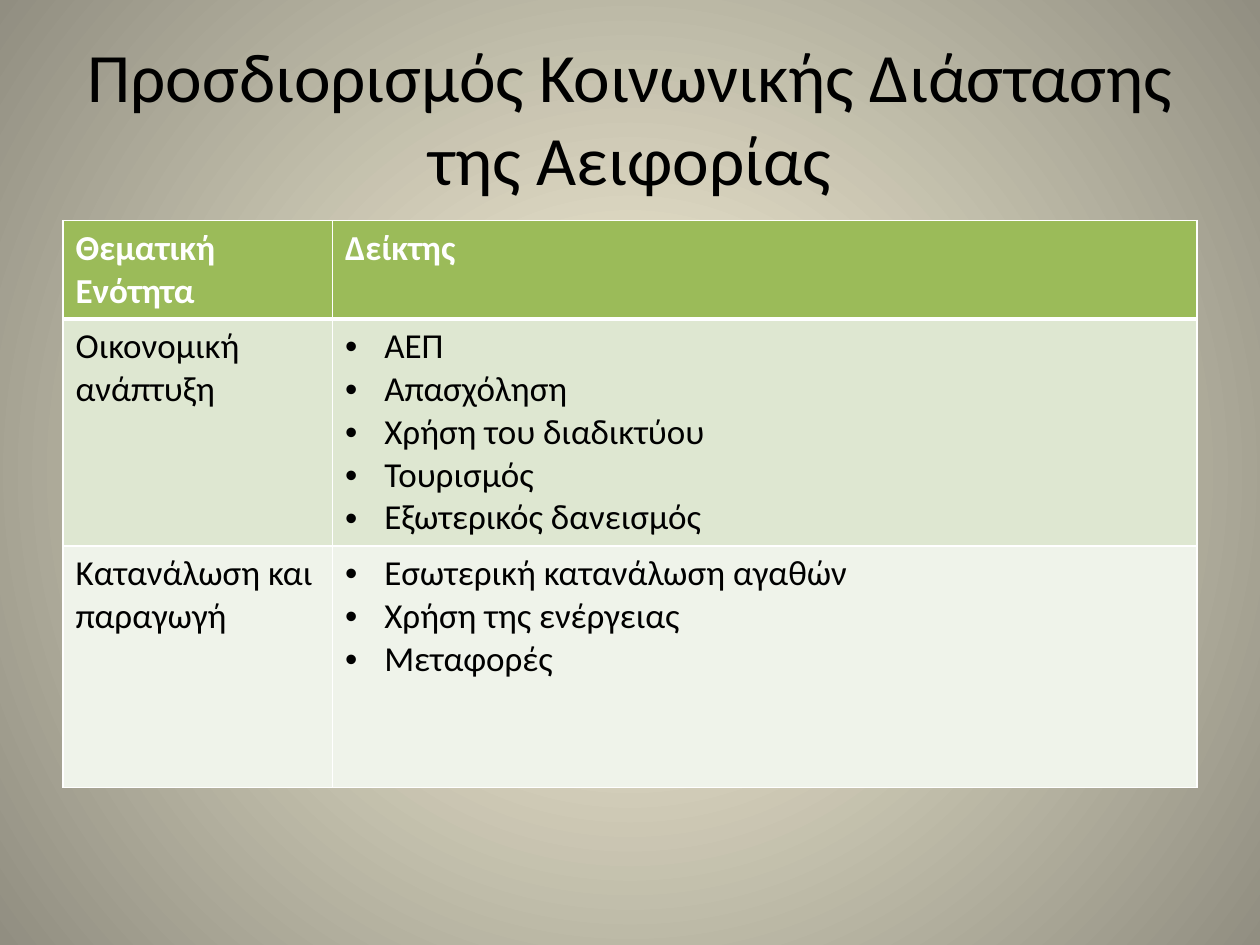
from dataclasses import dataclass

from lxml.etree import SubElement
from pptx import Presentation
from pptx.dml.color import RGBColor
from pptx.enum.text import MSO_ANCHOR, MSO_AUTO_SIZE, PP_ALIGN
from pptx.oxml.ns import qn
from pptx.slide import Slide
from pptx.table import _Cell
from pptx.util import Inches, Pt


@dataclass(frozen=True)
class Theme:
    font: str = "Calibri"
    title_size: float = 39.6
    body_size: float = 20
    text: str = "000000"
    white: str = "FFFFFF"
    header: str = "9BBB59"
    bands: tuple[str, ...] = ("DEE7D1", "EFF3EA")
    glow: tuple[str, ...] = ("FCF7DD", "918E81")
    border: float = 1
    header_rule: float = 3


@dataclass(frozen=True)
class Topic:
    name: str
    indicators: tuple[str, ...]
    height: float


THEME = Theme()
TITLE = "Προσδιορισμός Κοινωνικής Διάστασης της Αειφορίας"
HEADINGS = ("Θεματική Ενότητα", "Δείκτης")
HEADER_HEIGHT = 0.78
COLUMN_WIDTHS = (2.14, 6.86)
TOPICS = (
    Topic("Οικονομική ανάπτυξη",
          ("ΑΕΠ", "Απασχόληση", "Χρήση του διαδικτύου", "Τουρισμός",
           "Εξωτερικός δανεισμός"), 1.8),
    Topic("Κατανάλωση και παραγωγή",
          ("Εσωτερική κατανάλωση αγαθών", "Χρήση της ενέργειας", "Μεταφορές"), 1.92),
)


def add_run(p, text: str, size: float, color: str, bold: bool = False) -> None:
    r = p.add_run()
    r.text = text
    r.font.name = THEME.font
    r.font.size = Pt(size)
    r.font.bold = bold
    r.font.color.rgb = RGBColor.from_string(color)


def set_background(s: Slide) -> None:
    """Fill the background with a gradient that spreads from the centre."""
    fill = s.background.fill
    fill.gradient()
    for stop, color, position in zip(fill.gradient_stops, THEME.glow, (0, 1)):
        stop.color.rgb = RGBColor.from_string(color)
        stop.position = position
    grad = s._element.find(".//" + qn("a:gradFill"))
    grad.remove(grad.find(qn("a:lin")))
    circle = SubElement(grad, qn("a:path"), path="circle")
    SubElement(circle, qn("a:fillToRect"), dict.fromkeys("ltrb", "50000"))


def add_title(s: Slide) -> None:
    sp = s.shapes.title
    sp.left, sp.top, sp.width, sp.height = map(Inches, (0.5, 0.3, 9, 1.25))
    tf = sp.text_frame
    tf.word_wrap = True
    tf.auto_size = MSO_AUTO_SIZE.NONE
    tf.vertical_anchor = MSO_ANCHOR.MIDDLE
    p = tf.paragraphs[0]
    p.alignment = PP_ALIGN.CENTER
    add_run(p, TITLE, THEME.title_size, THEME.text)


def set_borders(cell: _Cell, top: float, bottom: float) -> None:
    tc_pr = cell._tc.get_or_add_tcPr()
    widths = {"L": THEME.border, "R": THEME.border, "T": top, "B": bottom}
    for side, width in widths.items():
        ln = SubElement(tc_pr, qn(f"a:ln{side}"), w=str(Pt(width)))
        SubElement(SubElement(ln, qn("a:solidFill")), qn("a:srgbClr"), val=THEME.white)


def add_bullet(p) -> None:
    indent = Inches(0.31)
    p_pr = p._p.get_or_add_pPr()
    p_pr.set("marL", str(indent))
    p_pr.set("indent", str(-indent))
    SubElement(p_pr, qn("a:buFont"), typeface="Arial")
    SubElement(p_pr, qn("a:buChar"), char="•")


def fill_cell(cell: _Cell, lines: tuple[str, ...], fill: str, *,
              header: bool = False, bullets: bool = False,
              top: float = THEME.border) -> None:
    set_borders(cell, top, THEME.header_rule if header else THEME.border)
    cell.fill.solid()
    cell.fill.fore_color.rgb = RGBColor.from_string(fill)
    tf = cell.text_frame
    for i, line in enumerate(lines):
        p = tf.add_paragraph() if i else tf.paragraphs[0]
        if bullets:
            add_bullet(p)
        add_run(p, line, THEME.body_size, THEME.white if header else THEME.text, header)


def add_indicator_table(s: Slide) -> None:
    heights = (HEADER_HEIGHT, *(topic.height for topic in TOPICS))
    table = s.shapes.add_table(
        len(heights), len(COLUMN_WIDTHS), Inches(0.5), Inches(1.75),
        Inches(sum(COLUMN_WIDTHS)), Inches(sum(heights))).table
    for column, width in zip(table.columns, COLUMN_WIDTHS):
        column.width = Inches(width)
    for row, height in zip(table.rows, heights):
        row.height = Inches(height)
    for col, heading in enumerate(HEADINGS):
        fill_cell(table.cell(0, col), (heading,), THEME.header, header=True)
    for row, (topic, band) in enumerate(zip(TOPICS, THEME.bands), start=1):
        top = THEME.header_rule if row == 1 else THEME.border
        fill_cell(table.cell(row, 0), (topic.name,), band, top=top)
        fill_cell(table.cell(row, 1), topic.indicators, band, bullets=True, top=top)


def main() -> None:
    prs = Presentation()
    prs.slide_width, prs.slide_height = Inches(10), Inches(7.5)
    s = prs.slides.add_slide(prs.slide_layouts[5])
    set_background(s)
    add_title(s)
    add_indicator_table(s)
    prs.save("out.pptx")


if __name__ == "__main__":
    main()
